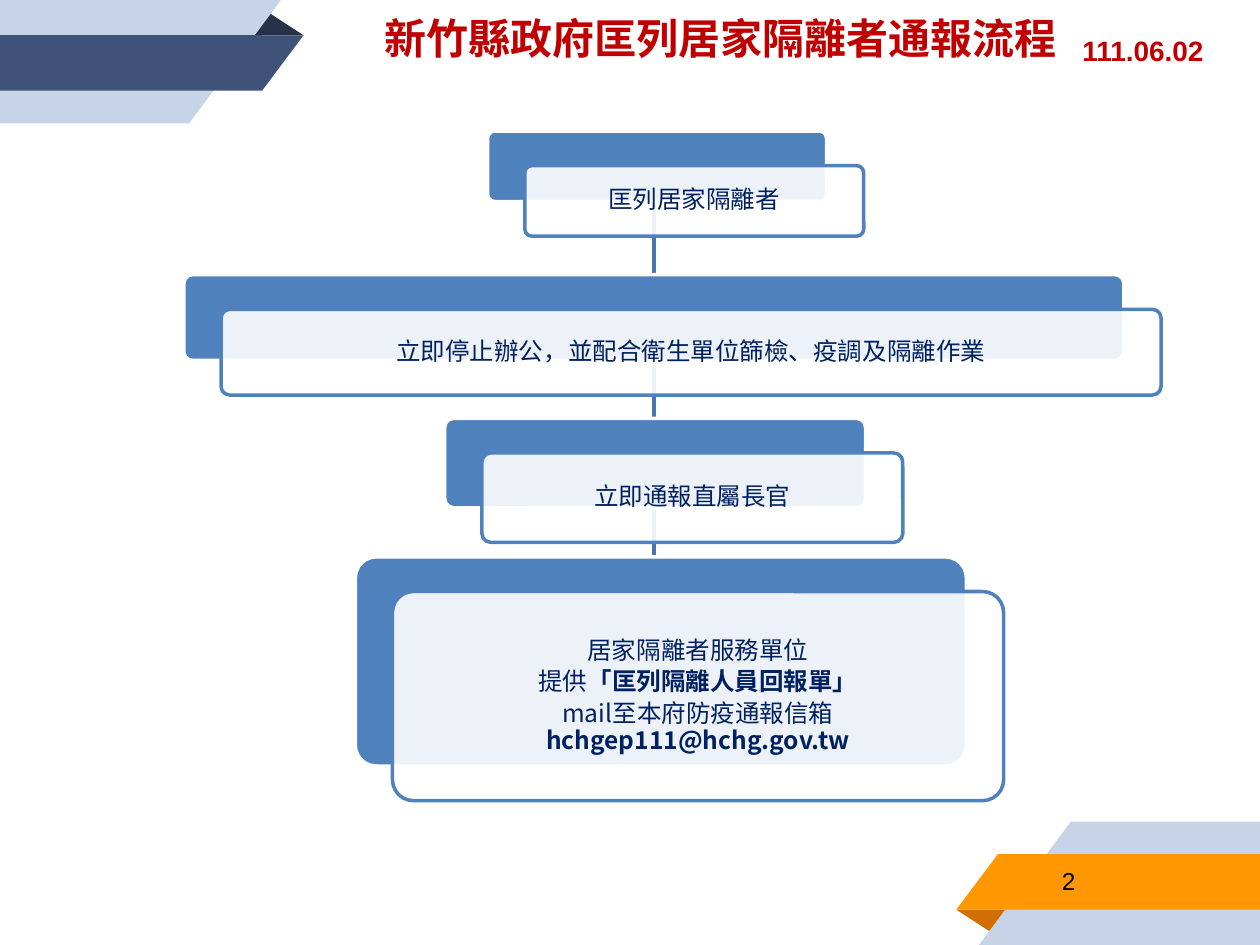
from pptx import Presentation
from pptx.dml.color import RGBColor
from pptx.enum.shapes import MSO_CONNECTOR as CONNECTOR, MSO_SHAPE as SHAPE
from pptx.enum.text import MSO_ANCHOR as ANCHOR, PP_ALIGN as ALIGN
from pptx.oxml.ns import qn
from pptx.util import Inches, Pt
from lxml.etree import SubElement

WHITE = RGBColor(0xFF, 0xFF, 0xFF)
BLACK = RGBColor(0x00, 0x00, 0x00)
RED = RGBColor(0xC0, 0x00, 0x00)
INK = RGBColor(0x00, 0x20, 0x60)
BLUE = RGBColor(0x4F, 0x81, 0xBD)
LINK = RGBColor(0x48, 0x75, 0xAC)
PALE = RGBColor(0xC7, 0xD3, 0xE6)
NAVY = RGBColor(0x3F, 0x53, 0x78)
DARK_NAVY = RGBColor(0x26, 0x32, 0x48)
ORANGE = RGBColor(0xFF, 0x98, 0x00)
DARK_ORANGE = RGBColor(0xD2, 0x6F, 0x00)
LATIN, HAN = "Arial", "Noto Sans CJK SC"

WIDTH, HEIGHT = Inches(10), Inches(7.5)
COLUMNS, ROWS = 100, 75
RIBBON_SIZE = (24.1, 9.8)
FRONT_SHIFT = (2.95, 2.75)

STEPS = [
    ((38.7, 10.4, 26.9, 5.6), [[("匡列居家隔離者", False)]]),
    ((14.6, 21.8, 74.6, 6.8),
     [[("立即停止辦公，並配合衛生單位篩檢、疫調及隔離作業", False)]]),
    ((35.3, 33.2, 33.4, 7.1), [[("立即通報直屬長官", False)]]),
    ((28.2, 44.2, 48.5, 16.6), [
        [("居家隔離者服務單位", False)],
        [("提供", False), ("「匡列隔離人員回報單」", True)],
        [("mail至本府防疫通報信箱", False)],
        [("hchgep111@hchg.gov.tw", True)],
    ]),
]


def across(columns):
    return round(WIDTH * columns / COLUMNS)


def down(rows):
    return round(HEIGHT * rows / ROWS)


def place(box):
    left, top, width, height = box
    return across(left), down(top), across(width), down(height)


def write(frame, paragraphs, *, size, color, font=HAN, align=ALIGN.LEFT,
          anchor=ANCHOR.TOP, inset=0.1, spacing=1.0, after=0):
    frame.word_wrap = True
    frame.vertical_anchor = anchor
    frame.margin_left = frame.margin_right = Inches(inset)
    frame.margin_top = frame.margin_bottom = Inches(inset)
    for index, runs in enumerate(paragraphs):
        paragraph = frame.add_paragraph() if index else frame.paragraphs[0]
        paragraph.alignment = align
        paragraph.line_spacing = spacing
        paragraph.space_before = Pt(0)
        paragraph.space_after = Pt(after if index < len(paragraphs) - 2 else 0)
        for words, bold in runs:
            run = paragraph.add_run()
            run.text = words
            run.font.size = Pt(size)
            run.font.bold = bold
            run.font.name = font
            run.font.color.rgb = color
            SubElement(run.font._element, qn("a:ea"), typeface=font)


def block(slide, kind, box, fill, line=None, corner=None):
    shape = slide.shapes.add_shape(kind, *place(box))
    shape.shadow.inherit = False
    shape.fill.solid()
    shape.fill.fore_color.rgb = fill
    if line is None:
        shape.line.fill.background()
    else:
        shape.line.color.rgb = line
        shape.line.width = Pt(2)
    if corner is not None:
        shape.adjustments[0] = corner
    return shape


def ribbon(slide, left, top, band, fold, mirrored=False):
    width, height = RIBBON_SIZE

    def part(kind, x, y, w, h, fill, corner=None):
        if mirrored:
            x, y = width - x - w, height - y - h
        return block(slide, kind, (left + x, top + y, w, h), fill, corner=corner)

    def strip(y, body, tip, h, fill):
        part(SHAPE.RECTANGLE, 0, y, body, h, fill)
        end = part(SHAPE.RIGHT_TRIANGLE, body, y, tip, h, fill)
        end._element.spPr.xfrm.set("flipH", "1")
        end.rotation = 0 if mirrored else 180

    crease = part(SHAPE.ISOSCELES_TRIANGLE, 19.8, 0.9, 4.3, 1.9, fold, 0.32)
    crease.rotation = 180 if mirrored else 0
    strip(0, 15, 7.3, 9.8, PALE)
    strip(2.8, 20.8, 3.3, 4.4, band)


def header(slide, box):
    left, top, width, height = box
    title = slide.shapes.title
    title.left, title.top, title.width, title.height = place(
        (left, top, 58.3, height))
    write(title.text_frame, [[("新竹縣政府匡列居家隔離者通報流程", True)]],
          size=24, color=RED)
    date = slide.shapes.add_textbox(*place((left + width - 21.3, top + 2.2, 21.3, 3.7)))
    write(date.text_frame, [[("111.06.02", True)]], size=16, color=RED,
          font=LATIN, align=ALIGN.RIGHT, inset=0.05)
    date.text_frame.margin_right = Inches(0.1)


def link(slide, upper, lower):
    center = across(51.9)
    line = slide.shapes.add_connector(
        CONNECTOR.STRAIGHT, center, down(upper[1] + upper[3]), center, down(lower[1]))
    line.line.color.rgb = LINK
    line.line.width = Pt(2)
    SubElement(line._element.spPr, qn("a:effectLst"))


def card(slide, box, paragraphs):
    left, top, width, height = box
    block(slide, SHAPE.ROUNDED_RECTANGLE, box, BLUE, WHITE, 0.1)
    front_box = (left + FRONT_SHIFT[0], top + FRONT_SHIFT[1], width, height)
    front = block(slide, SHAPE.ROUNDED_RECTANGLE, front_box, WHITE, BLUE, 0.1)
    tint = front._element.spPr.find(qn("a:solidFill")).find(qn("a:srgbClr"))
    SubElement(tint, qn("a:alpha"), val="90000")
    write(front.text_frame, paragraphs, size=14, color=INK, align=ALIGN.CENTER,
          anchor=ANCHOR.MIDDLE, inset=0.06, spacing=0.9, after=3)


def flow(slide, steps):
    boxes = [box for box, _ in steps]
    for upper, lower in zip(boxes, boxes[1:]):
        link(slide, upper, lower)
    for box, paragraphs in steps:
        card(slide, box, paragraphs)


def page_number(slide, box):
    number = slide.shapes.add_textbox(*place(box))
    write(number.text_frame, [[("2", False)]], size=14, color=BLACK,
          font=LATIN, anchor=ANCHOR.MIDDLE)


def main():
    deck = Presentation()
    deck.slide_width, deck.slide_height = WIDTH, HEIGHT
    slide = deck.slides.add_slide(deck.slide_layouts[5])
    ribbon(slide, COLUMNS - RIBBON_SIZE[0], ROWS - RIBBON_SIZE[1],
           ORANGE, DARK_ORANGE, mirrored=True)
    ribbon(slide, 0, 0, NAVY, DARK_NAVY)
    page_number(slide, (83.3, 67.6, 16.3, 4.6))
    header(slide, (29.5, 0, 67, 12.9))
    flow(slide, STEPS)
    deck.save("out.pptx")


if __name__ == "__main__":
    main()
